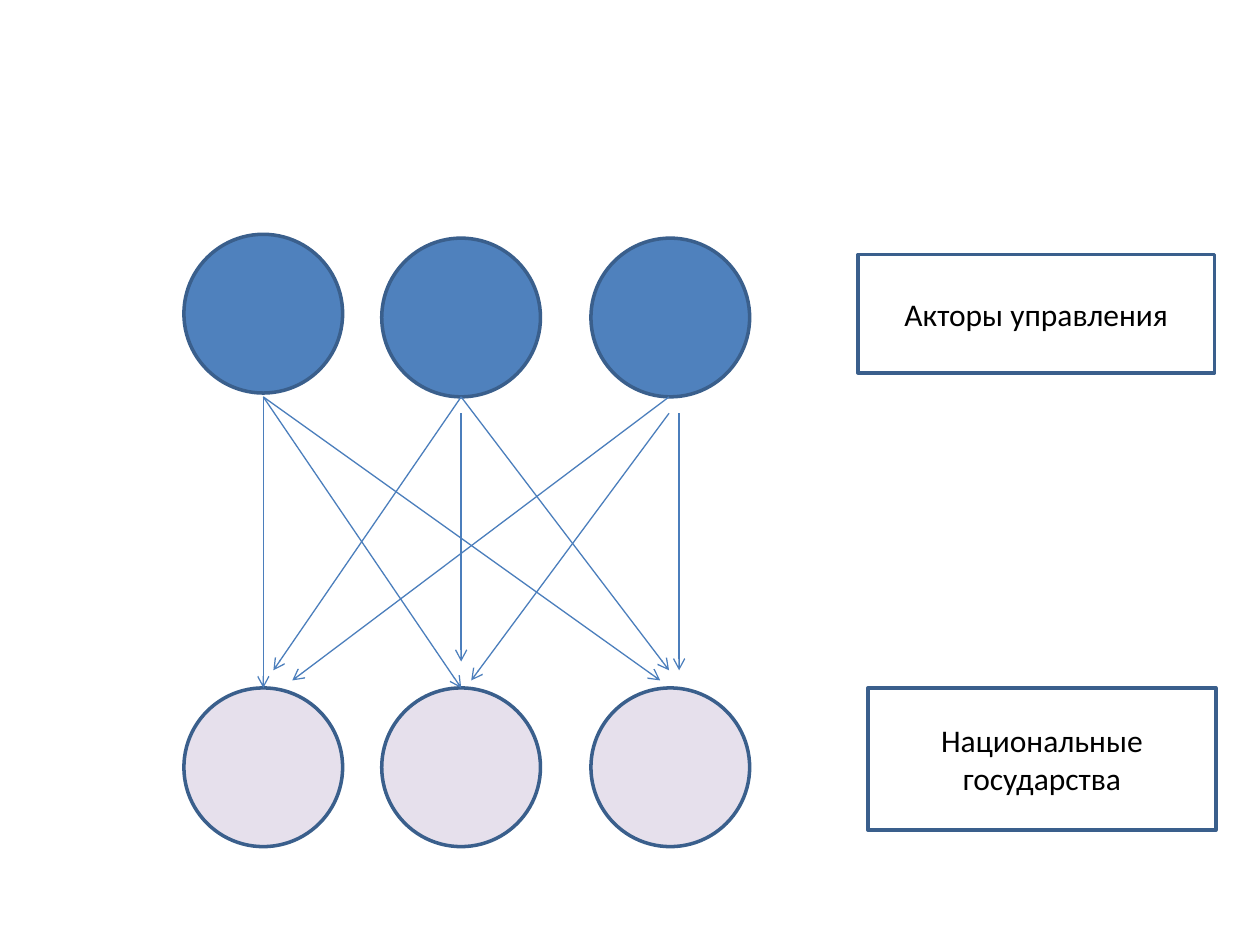
from lxml.etree import SubElement
from pptx import Presentation
from pptx.dml.color import RGBColor
from pptx.enum.shapes import MSO_CONNECTOR as Connector, MSO_SHAPE as Shape
from pptx.enum.text import MSO_ANCHOR as Anchor, PP_ALIGN as Align
from pptx.oxml.ns import qn
from pptx.util import Inches, Pt

COLS, ROWS = 100, 75  # grid over the whole slide


def rgb(value):
    return RGBColor.from_string(value)


class Diagram:
    """Holds the style and the current slide; lengths are grid columns and rows."""
    font, size, ink = "Calibri", 18, "000000"
    outline, arrow_color = "3A5F8C", "4B7EBC"
    actor_fill, state_fill, label_fill = "4F81BD", "E6E0EC", "FFFFFF"

    def __init__(self, prs):
        self.col = prs.slide_width / COLS
        self.row = prs.slide_height / ROWS
        self.s = prs.slides.add_slide(prs.slide_layouts[6])

    def place(self, x, y):
        return round(x * self.col), round(y * self.row)

    def shape(self, kind, x, y, w, h, fill):
        sp = self.s.shapes.add_shape(kind, *self.place(x, y), *self.place(w, h))
        sp.shadow.inherit = False
        sp.fill.solid()
        sp.fill.fore_color.rgb = rgb(fill)
        sp.line.color.rgb = rgb(self.outline)
        sp.line.width = Pt(2)
        return sp

    def circle(self, center, top, fill):
        return self.shape(Shape.OVAL, center - DIAMETER / 2, top, DIAMETER, DIAMETER, fill)

    def label(self, text, x, y, w, h):
        sp = self.shape(Shape.RECTANGLE, x, y, w, h, self.label_fill)
        tf = sp.text_frame
        tf.word_wrap = True
        tf.vertical_anchor = Anchor.MIDDLE
        p = tf.paragraphs[0]
        p.alignment = Align.CENTER
        r = p.add_run()
        r.text = text
        r.font.name = self.font
        r.font.size = Pt(self.size)
        r.font.color.rgb = rgb(self.ink)

    def arrow(self, start, end, target=None):
        """Draw an open arrow, joined to the top of target if one is given."""
        line = self.s.shapes.add_connector(
            Connector.STRAIGHT, *self.place(*start), *self.place(*end))
        if target is not None:
            line.end_connect(target, 0)
        line.line.color.rgb = rgb(self.arrow_color)
        line.line.width = Pt(0.75)
        SubElement(line.line._get_or_add_ln(), qn("a:tailEnd"), type="arrow")
        SubElement(line._element.spPr, qn("a:effectLst"))


DIAMETER = 12.6
CENTERS = (20.9, 36.6, 53.2)
ACTOR_TOPS = (18.6, 18.9, 18.9)
STATE_TOP = 54.6
NEAR, FAR = 31.5, 32.8  # rows where arrows leave the actors

# Per actor: start of each arrow, then its end; one arrow for each state
ARROWS = (
    (((20.9, NEAR), (20.9, STATE_TOP)),
     ((20.9, NEAR), (36.6, STATE_TOP)),
     ((20.9, NEAR), (52.4, 54))),
    (((36.6, NEAR), (21.7, 53.2)),
     ((36.6, FAR), (36.6, 52.5)),
     ((36.6, NEAR), (53.1, 53.2))),
    (((53.1, NEAR), (23.2, 54)),
     ((53.1, FAR), (37.4, 54)),
     ((53.9, FAR), (53.9, 53.2))),
)


def main():
    prs = Presentation()
    prs.slide_width, prs.slide_height = Inches(10), Inches(7.5)
    d = Diagram(prs)

    for center, top in zip(CENTERS, ACTOR_TOPS):
        d.circle(center, top, d.actor_fill)
    d.label("Акторы управления", 68.1, 20.2, 28.3, 9.4)

    states = [d.circle(center, STATE_TOP, d.state_fill) for center in CENTERS]
    d.label("Национальные государства", 68.9, STATE_TOP, 27.6, 11.3)

    for arrows in ARROWS:
        for state, (start, end) in zip(states, arrows):
            d.arrow(start, end, state if end[1] == STATE_TOP else None)

    prs.save("out.pptx")


if __name__ == "__main__":
    main()
